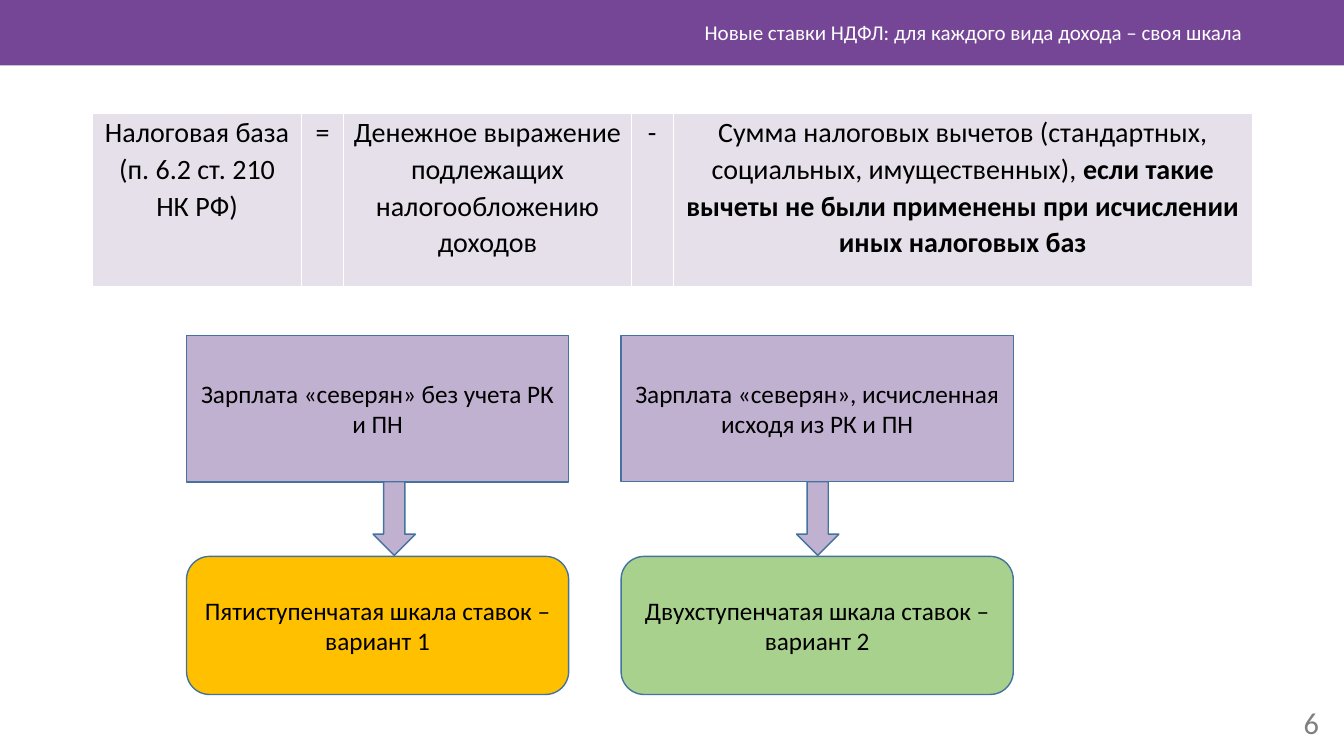
import pptx
import pptx.util
import pptx.dml.color
import pptx.enum.shapes
import pptx.enum.text
from lxml import etree

Inches, Pt = pptx.util.Inches, pptx.util.Pt
SHAPE = pptx.enum.shapes.MSO_SHAPE
ALIGN = pptx.enum.text.PP_ALIGN
MIDDLE = pptx.enum.text.MSO_ANCHOR.MIDDLE
A = "http://schemas.openxmlformats.org/drawingml/2006/main"
COLORS = {
    "header": "764696", "cell": "E6E0EB", "lilac": "C1B1D1",
    "yellow": "FFC000", "green": "A9D18E", "outline": "43739E",
    "text": "000000", "white": "FFFFFF", "gray": "808080",
}


def rgb(name):
    return pptx.dml.color.RGBColor.from_string(COLORS[name])


def style_paragraph(p, size, color="text", align=ALIGN.CENTER):
    p.alignment = align
    p.font.name = "Calibri"
    p.font.size = Pt(size)
    p.font.color.rgb = rgb(color)


def add_box(slide, kind, x, y, w, h, fill, text="", outlined=True):
    sp = slide.shapes.add_shape(kind, Inches(x), Inches(y), Inches(w), Inches(h))
    sp.shadow.inherit = False
    sp.fill.solid()
    sp.fill.fore_color.rgb = rgb(fill)
    if outlined:
        sp.line.color.rgb = rgb("outline")
        sp.line.width = Pt(1)
    else:
        sp.line.fill.background()
    if text:
        tf = sp.text_frame
        tf.word_wrap = True
        tf.vertical_anchor = MIDDLE
        p = tf.paragraphs[0]
        p.text = text
        style_paragraph(p, 18)


def add_label(slide, x, y, w, h, text, size, color):
    tf = slide.shapes.add_textbox(Inches(x), Inches(y), Inches(w), Inches(h)).text_frame
    tf.word_wrap = True
    tf.vertical_anchor = MIDDLE
    p = tf.paragraphs[0]
    p.text = text
    style_paragraph(p, size, color, ALIGN.RIGHT)


def fill_cell(cell, runs):
    cell.margin_left = cell.margin_right = Inches(0.07)
    cell.margin_top = cell.margin_bottom = 0
    p = cell.text_frame.paragraphs[0]
    for text, bold in runs:
        r = p.add_run()
        r.text = text
        if bold:
            r.font.bold = True
    style_paragraph(p, 20)
    p.line_spacing = 1.07
    # Borders precede the fill in the cell properties
    props = cell._tc.get_or_add_tcPr()
    for side, width in (("L", 1), ("R", 1), ("T", 1), ("B", 3)):
        ln = etree.SubElement(props, f"{{{A}}}ln{side}", w=str(Pt(width)))
        solid = etree.SubElement(ln, f"{{{A}}}solidFill")
        etree.SubElement(solid, f"{{{A}}}srgbClr", val=COLORS["white"])
    cell.fill.solid()
    cell.fill.fore_color.rgb = rgb("cell")


def add_formula(slide, x, y, height, columns):
    width = sum(w for w, _ in columns)
    table = slide.shapes.add_table(
        1, len(columns), Inches(x), Inches(y), Inches(width), Inches(height)).table
    table.first_row = table.horz_banding = False
    for i, (w, runs) in enumerate(columns):
        table.columns[i].width = Inches(w)
        fill_cell(table.cell(0, i), runs)


def main():
    prs = pptx.Presentation()
    prs.slide_width, prs.slide_height = Inches(13.33), Inches(7.5)
    slide = prs.slides.add_slide(prs.slide_layouts[6])

    # Header and page number
    add_box(slide, SHAPE.RECTANGLE, 0, 0, 13.33, 0.65, "header", outlined=False)
    add_label(slide, 12.51, 6.97, 0.67, 0.4, "6", 21.7, "gray")
    add_label(slide, 3.54, 0.12, 8.88, 0.4,
              "Новые ставки НДФЛ: для каждого вида дохода – своя шкала", 15, "white")

    # Tax base formula
    add_formula(slide, 0.92, 1.13, 1.73, [
        (2.07, [("Налоговая база (п. 6.2 ст. 210 НК РФ)", False)]),
        (0.42, [("=", False)]),
        (2.85, [("Денежное выражение подлежащих налогообложению доходов", False)]),
        (0.42, [("-", False)]),
        (5.74, [("Сумма налоговых вычетов (стандартных, социальных, имущественных), ", False),
                ("если такие вычеты не были применены при исчислении иных налоговых баз", True)]),
    ])

    # Income type, arrow and rate scale in each branch
    branches = [
        (SHAPE.FLOWCHART_PROCESS, 1.85, 3.79, 3.7, "yellow",
         "Зарплата «северян» без учета РК и ПН",
         "Пятиступенчатая шкала ставок – вариант 1"),
        (SHAPE.RECTANGLE, 6.16, 3.89, 7.9, "green",
         "Зарплата «северян», исчисленная исходя из РК и ПН",
         "Двухступенчатая шкала ставок – вариант 2"),
    ]
    for kind, x, w, arrow_x, scale_fill, income, scale in branches:
        add_box(slide, kind, x, 3.33, w, 1.45, "lilac", income)
        add_box(slide, SHAPE.ROUNDED_RECTANGLE, x, 5.52, w, 1.37, scale_fill, scale)
        add_box(slide, SHAPE.DOWN_ARROW, arrow_x, 4.78, 0.42, 0.73, "lilac")

    prs.save("out.pptx")


if __name__ == "__main__":
    main()
